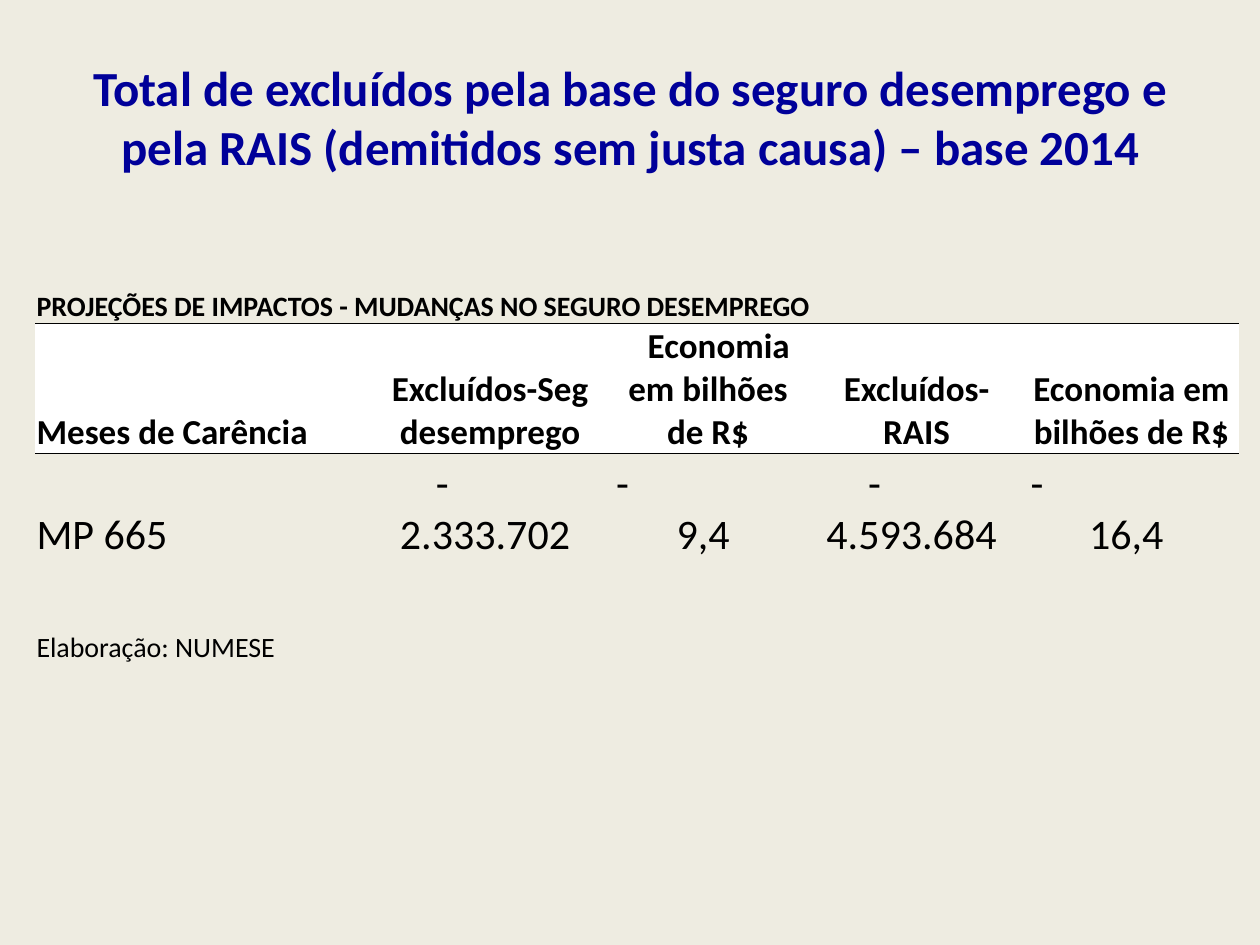
from pptx import Presentation
from pptx.dml.color import RGBColor
from pptx.enum.text import MSO_ANCHOR, PP_ALIGN
from pptx.oxml.ns import qn
from pptx.util import Inches, Pt
from lxml.etree import SubElement

BACKGROUND = RGBColor(0xEE, 0xEC, 0xE1)
NAVY = RGBColor(0x00, 0x00, 0x99)
BLACK = RGBColor(0x00, 0x00, 0x00)
WHITE = RGBColor(0xFF, 0xFF, 0xFF)

COLUMN_WIDTHS = [2.68, 1.86, 1.6, 1.71, 1.7]
ROW_HEIGHTS = [0.83, 1.03, 0.85, 0.83]
HEADERS = ["Meses de Carência", "Excluídos-Seg desemprego", "Economia\vem bilhões de R$",
           "Excluídos- RAIS", "Economia em bilhões de R$"]
VALUES = ["2.333.702", "9,4", "4.593.684", "16,4"]
DASH_INDENTS = [0.49, 0.06, 0.46, 0.04]


class SlideBuilder:
    font = "Calibri"

    def __init__(self, presentation):
        self.width = presentation.slide_width
        self.height = presentation.slide_height
        self.slide = presentation.slides.add_slide(presentation.slide_layouts[5])
        self.slide.background.fill.solid()
        self.slide.background.fill.fore_color.rgb = BACKGROUND

    def format_text(self, text_frame, size, color=BLACK, bold=False, align=PP_ALIGN.LEFT):
        for paragraph in text_frame.paragraphs:
            paragraph.alignment = align
            for run in paragraph.runs:
                run.font.name = self.font
                run.font.size = Pt(size)
                run.font.bold = bold
                run.font.color.rgb = color

    def title(self, text, left, top, width, height):
        shape = self.slide.shapes.title
        shape.left, shape.width = int(self.width * left), int(self.width * width)
        shape.top, shape.height = int(self.height * top), int(self.height * height)
        shape.text_frame.text = text
        shape.text_frame.vertical_anchor = MSO_ANCHOR.MIDDLE
        self.format_text(shape.text_frame, 28, NAVY, True, PP_ALIGN.CENTER)

    def table(self, left, top, column_widths, row_heights):
        frame = self.slide.shapes.add_table(
            len(row_heights), len(column_widths),
            int(self.width * left), int(self.height * top),
            Inches(sum(column_widths)), Inches(sum(row_heights)))
        table = frame.table
        table.first_row = table.horz_banding = False
        style = table._tbl.tblPr.find(qn("a:tableStyleId"))
        style.text = "{2D5ABB26-0587-4C30-8999-92F81FD0307C}"
        for column, width in zip(table.columns, column_widths):
            column.width = Inches(width)
        for row, height in zip(table.rows, row_heights):
            row.height = Inches(height)
        for cell in table.iter_cells():
            cell.margin_left = cell.margin_right = cell.margin_top = Inches(0.01)
            cell.margin_bottom = 0
            cell.vertical_anchor = MSO_ANCHOR.BOTTOM
            cell.fill.background()
        return table

    def cell(self, cell, text, size, bold=False, align=PP_ALIGN.LEFT):
        cell.text_frame.text = text
        self.format_text(cell.text_frame, size, bold=bold, align=align)

    def rules(self, cell, top, bottom):
        properties = cell._tc.get_or_add_tcPr()
        for position, (edge, visible) in enumerate((("lnT", top), ("lnB", bottom))):
            line = SubElement(properties, qn(f"a:{edge}"), w=str(Pt(0.5)))
            if visible:
                fill = SubElement(line, qn("a:solidFill"))
                SubElement(fill, qn("a:srgbClr"), val=str(BLACK))
            else:
                SubElement(line, qn("a:noFill"))
            properties.insert(position, line)

    def indent(self, paragraph, attribute, inches):
        paragraph._p.get_or_add_pPr().set(attribute, str(Inches(inches)))


def main():
    presentation = Presentation()
    presentation.slide_width, presentation.slide_height = Inches(10), Inches(7.5)
    builder = SlideBuilder(presentation)
    builder.title("Total de excluídos pela base do seguro desemprego e pela RAIS "
                  "(demitidos sem justa causa) – base 2014", 0.05, 0.04, 0.9, 1 / 6)

    table = builder.table(0.028, 0.232, COLUMN_WIDTHS, ROW_HEIGHTS)
    table.cell(0, 0).merge(table.cell(0, 3))
    table.cell(3, 0).merge(table.cell(3, 2))
    builder.cell(table.cell(0, 0), "PROJEÇÕES DE IMPACTOS - MUDANÇAS NO SEGURO DESEMPREGO", 16, True)

    for column, header in enumerate(HEADERS):
        cell = table.cell(1, column)
        builder.cell(cell, header, 20, True, PP_ALIGN.CENTER if column else PP_ALIGN.LEFT)
        cell.fill.solid()
        cell.fill.fore_color.rgb = WHITE
        builder.rules(table.cell(0, column), top=False, bottom=True)
        builder.rules(cell, top=True, bottom=True)
        builder.rules(table.cell(2, column), top=True, bottom=False)
        builder.rules(table.cell(3, column), top=False, bottom=False)
    builder.indent(table.cell(1, 2).text_frame.paragraphs[0], "indent", 0.17)

    builder.cell(table.cell(2, 0), "MP 665", 24)
    for column, (value, dash_indent) in enumerate(zip(VALUES, DASH_INDENTS), start=1):
        cell = table.cell(2, column)
        builder.cell(cell, f"-\n{value}", 24, align=PP_ALIGN.CENTER)
        cell.margin_right = Inches(0.09)
        dash = cell.text_frame.paragraphs[0]
        dash.alignment = PP_ALIGN.LEFT
        builder.indent(dash, "marL", dash_indent)

    builder.cell(table.cell(3, 0), "Elaboração: NUMESE", 16)
    presentation.save("out.pptx")


if __name__ == "__main__":
    main()
